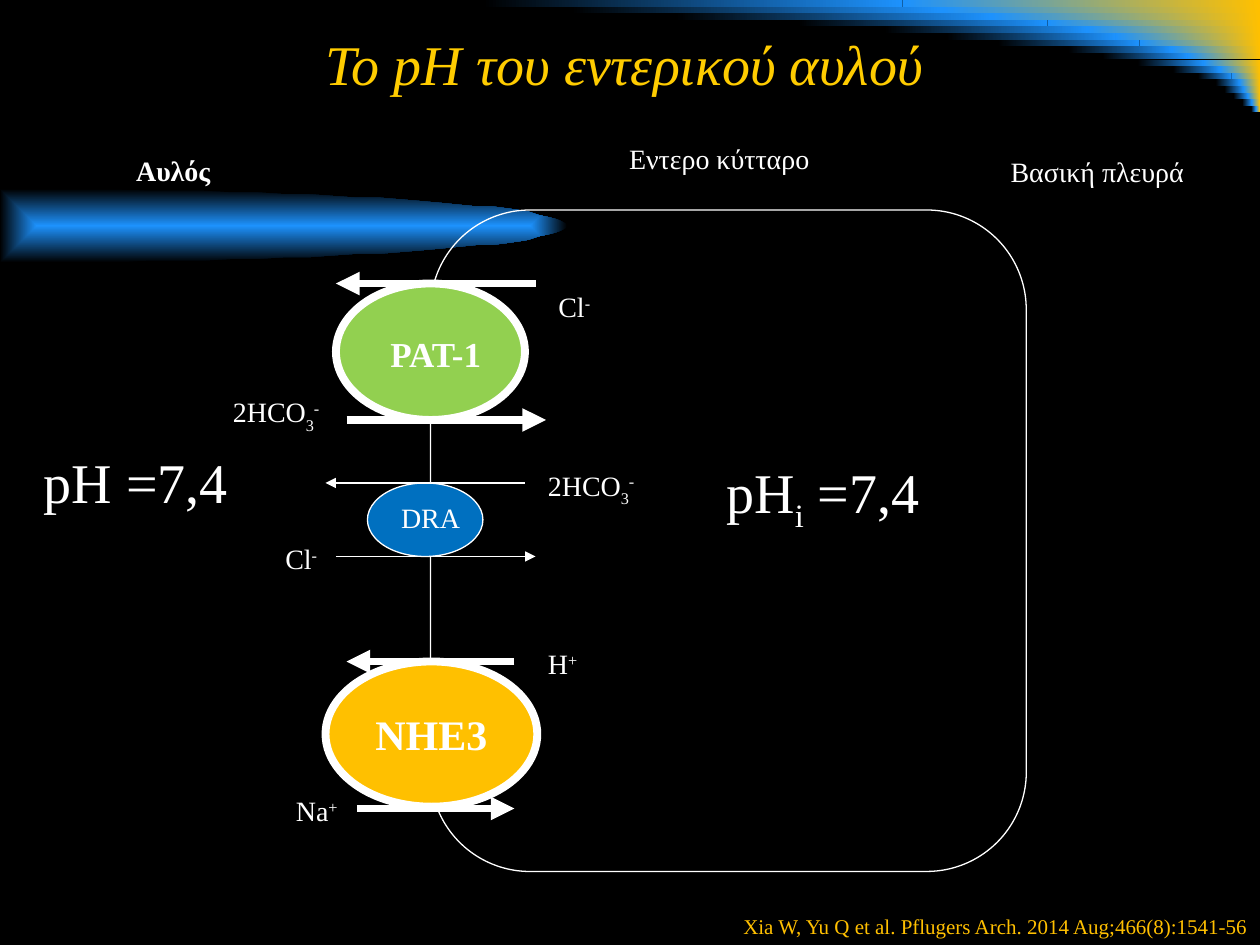
import math
from lxml import etree
from pptx import Presentation
from pptx.dml.color import RGBColor
from pptx.enum.shapes import MSO_CONNECTOR, MSO_SHAPE
from pptx.enum.text import MSO_ANCHOR, MSO_AUTO_SIZE, PP_ALIGN
from pptx.oxml.ns import qn
from pptx.util import Pt

LEFT, CENTER, RIGHT = PP_ALIGN.LEFT, PP_ALIGN.CENTER, PP_ALIGN.RIGHT
TOP, MIDDLE = MSO_ANCHOR.TOP, MSO_ANCHOR.MIDDLE
GROW, NO_FIT = MSO_AUTO_SIZE.SHAPE_TO_FIT_TEXT, MSO_AUTO_SIZE.NONE
OVAL, RECT, ROUNDED = MSO_SHAPE.OVAL, MSO_SHAPE.RECTANGLE, MSO_SHAPE.ROUNDED_RECTANGLE
STRAIGHT = MSO_CONNECTOR.STRAIGHT

FONT = "Times New Roman"
COLORS = {"black": "000000", "white": "FFFFFF", "sky": "1D92FD", "amber": "FFC000",
          "gold": "FFCC00", "blue": "0070C0", "green": "92D050"}
WIDTH, HEIGHT = 720, 540
THIN, THICK = 0.75, 4.5

BICARBONATE = [("2HCO", 0), ("3", -30), ("-", 30)]
CHLORIDE = [("Cl", 0), ("-", 30)]
PROTON = [("Η", 0), ("+", 30)]
SODIUM = [("Na", 0), ("+", 30)]


def rgb(name):
    return RGBColor.from_string(COLORS[name])


def write(tf, text, size=16, color="white", bold=False, italic=False,
          align=LEFT, anchor=TOP, wrap=True, fit=GROW):
    tf.word_wrap, tf.auto_size, tf.vertical_anchor = wrap, fit, anchor
    p = tf.paragraphs[0]
    p.alignment = align
    for part, baseline in [(text, 0)] if isinstance(text, str) else text:
        r = p.add_run()
        r.text = part
        r.font.name, r.font.size = FONT, Pt(size)
        r.font.bold, r.font.italic = bold, italic
        r.font.color.rgb = rgb(color)
        if baseline:
            r.font._element.set("baseline", str(baseline * 1000))


class Diagram:
    def __init__(self, prs):
        self.s = prs.slides.add_slide(prs.slide_layouts[5])
        self.shapes = self.s.shapes
        self.s.background.fill.solid()
        self.s.background.fill.fore_color.rgb = rgb("black")

    def title(self, box, text, **style):
        sp = self.shapes.title
        sp.left, sp.top, sp.width, sp.height = map(Pt, box)
        write(sp.text_frame, text, fit=NO_FIT, **style)

    def label(self, box, text, **style):
        write(self.shapes.add_textbox(*map(Pt, box)).text_frame, text, **style)

    def shape(self, kind, box, fill=None, line=THIN):
        sp = self.shapes.add_shape(kind, *map(Pt, box))
        sp.shadow.inherit = False
        if fill:
            sp.fill.solid()
            sp.fill.fore_color.rgb = rgb(fill)
        else:
            sp.fill.background()
        if line:
            sp.line.color.rgb, sp.line.width = rgb("white"), Pt(line)
        else:
            sp.line.fill.background()
        return sp

    def gradient(self, sp, start, end):
        sp.fill.gradient()
        sp.fill.gradient_angle = 0
        for stop, name in zip(sp.fill.gradient_stops, (start, end)):
            stop.color.rgb = rgb(name)

    def strip(self, box, start, end):
        self.gradient(self.shape(RECT, box, line=None), start, end)

    def streak(self, width, middle, half):
        arc = [(width * math.cos(t), middle + half * math.sin(t))
               for t in (math.radians(d) for d in range(-90, 91, 3))]
        builder = self.shapes.build_freeform(*arc[0], scale=Pt(1))
        builder.add_line_segments(arc[1:], close=True)
        sp = builder.convert_to_shape()
        sp.shadow.inherit = False
        sp.line.fill.background()
        self.gradient(sp, "sky", "black")
        lin = sp._element.spPr.find(".//" + qn("a:lin"))
        route = etree.Element(qn("a:path"), {"path": "shape"})
        etree.SubElement(route, qn("a:fillToRect"), dict.fromkeys("ltrb", "50000"))
        lin.getparent().replace(lin, route)

    def arrow(self, start, tip, y, width):
        cn = self.shapes.add_connector(STRAIGHT, Pt(start), Pt(y), Pt(tip), Pt(y))
        cn.line.color.rgb, cn.line.width = rgb("white"), Pt(width)
        etree.SubElement(cn.line._get_or_add_ln(), qn("a:tailEnd"), {"type": "triangle"})
        etree.SubElement(cn._element.spPr, qn("a:effectLst"))


def main():
    prs = Presentation()
    prs.slide_width, prs.slide_height = Pt(WIDTH), Pt(HEIGHT)
    d = Diagram(prs)

    strip_height = 3.78
    strip_widths = [444.2, 393.8, 334.1, 264.2, 214.6, 179.3, 149.8, 109.4, 90,
                    69.8, 49.7, 35.3, 25.2, 20.2, 15.1, 10.1, 5]
    for row, width in enumerate(strip_widths):
        y, split = row * strip_height, WIDTH - 0.46 * width
        d.strip((split, y, WIDTH - split, strip_height), "sky", "amber")
        d.strip((WIDTH - width, y, 0.54 * width, strip_height), "black", "sky")
    d.streak(324, 129, 21)

    d.title((24, 0, 666, 72), "Το pH του εντερικού αυλού", size=32, color="gold",
            italic=True, align=CENTER, anchor=MIDDLE)
    d.label((558, 85, 138, 32), "Βασική πλευρά", align=CENTER)
    d.label((342, 77.5, 138, 27), "Εντερο κύτταρο", align=CENTER)
    d.label((42, 84, 114, 32), "Αυλός", bold=True, align=CENTER)

    cell = d.shape(ROUNDED, (246, 120, 340.5, 378))
    cell.adjustments[0] = 0.167

    nhe3 = d.shape(OVAL, (186, 378, 121, 83), "amber", THICK)
    write(nhe3.text_frame, "NHE3", size=24, bold=True, align=CENTER, anchor=MIDDLE,
          wrap=False, fit=NO_FIT)
    d.shape(OVAL, (210, 276, 66, 42), "blue")
    d.label((216, 282, 60, 27), "DRA", align=CENTER, anchor=MIDDLE)
    d.shape(OVAL, (192, 162, 108, 78), "green", THICK)
    d.label((210, 186, 78, 32), "PAT-1", size=20, bold=True, align=CENTER, anchor=MIDDLE)

    for start, tip, y, width in [(306, 192, 162, THICK), (198, 312, 240, THICK),
                                 (300, 186, 276, THIN), (192, 306, 318, THIN),
                                 (294, 198, 378, THICK), (204, 294, 462, THICK)]:
        d.arrow(start, tip, y, width)

    for x, y, width, ion in [(312, 162, 33, CHLORIDE), (126, 222, 65.5, BICARBONATE),
                             (306, 264, 65.5, BICARBONATE), (156, 306, 33, CHLORIDE),
                             (306, 366, 32.5, PROTON), (162, 450, 39.5, SODIUM)]:
        d.label((x, y, width, 27), ion, wrap=False)

    d.label((18, 252, 120, 46), "pH =7,4", size=32)
    d.label((408, 258, 144, 46), [("pH", 0), ("i", -25), (" =7,4", 0)], size=32)
    d.label((360, 518.5, 360, 21.5), "Xia W, Yu Q et al. Pflugers Arch. 2014 Aug;466(8):1541-56",
            size=12, color="amber", align=RIGHT)

    prs.save("out.pptx")


if __name__ == "__main__":
    main()
